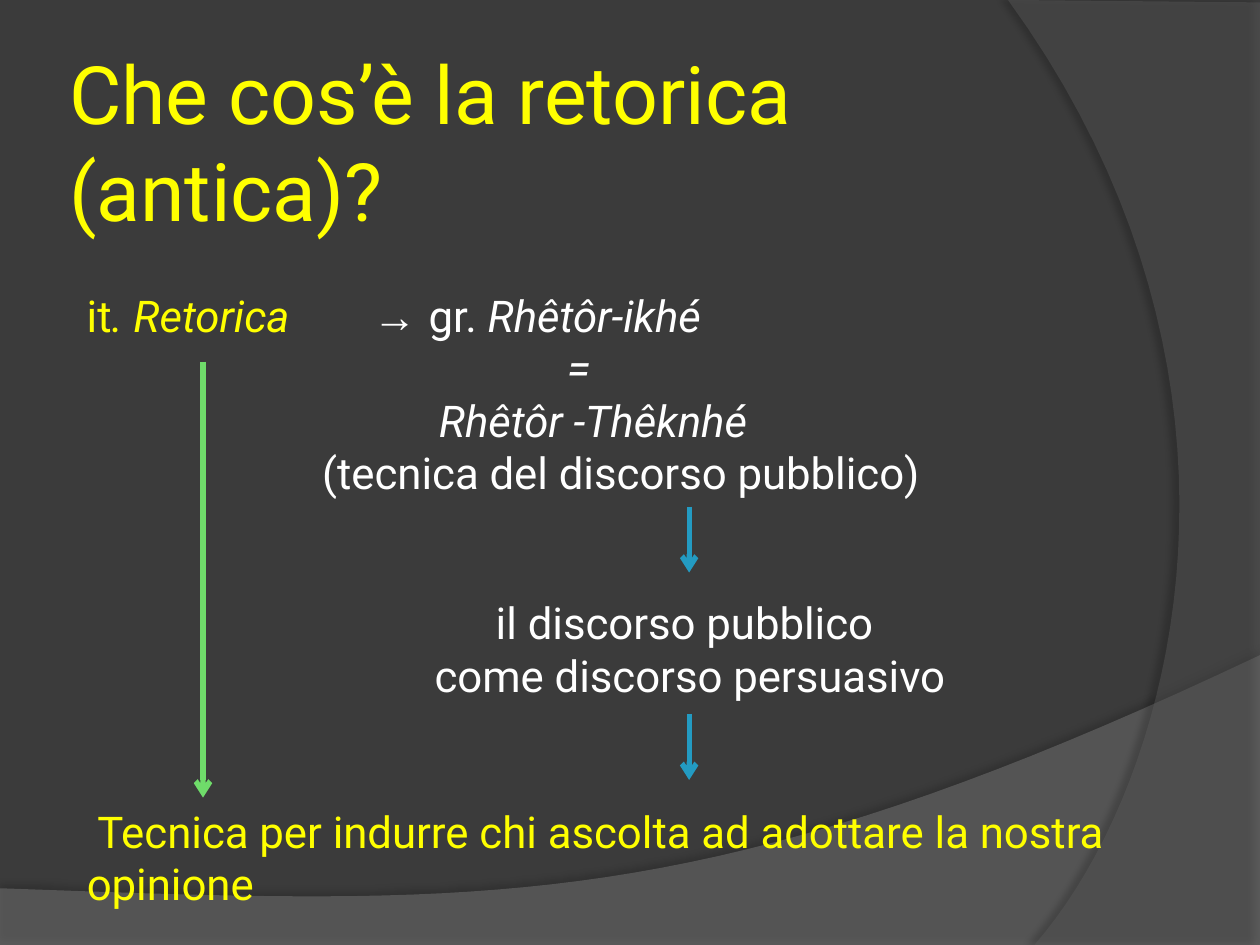
"""Build the slide that explains what ancient rhetoric is."""
import pptx
import pptx.dml.color
import pptx.enum.dml
import pptx.enum.shapes
import pptx.enum.text
import pptx.oxml
import pptx.oxml.ns
import pptx.util

Pt = pptx.util.Pt
RGBColor = pptx.dml.color.RGBColor
CHARCOAL = RGBColor(0x3B, 0x3B, 0x3B)
HILL_GREY = RGBColor(0x7F, 0x7F, 0x7F)
ARC_GREY = RGBColor(0x5E, 0x5E, 0x5E)
YELLOW = RGBColor(0xFF, 0xFF, 0x00)
WHITE = RGBColor(0xFF, 0xFF, 0xFF)
BLUE = RGBColor(0x23, 0x9B, 0xC2)
GREEN = RGBColor(0x6F, 0xDC, 0x6A)
FONT = "Roboto"
BODY_SIZE = 25
CURVE_STEPS = 40
NAMESPACE = pptx.oxml.ns.nsdecls("a")


def curve_points(start, control_1, control_2, end):
    """Return points along a cubic curve, without its start."""
    points = []
    for step in range(1, CURVE_STEPS + 1):
        t = step / CURVE_STEPS
        weights = ((1 - t) ** 3, 3 * t * (1 - t) ** 2, 3 * t ** 2 * (1 - t), t ** 3)
        corners = (start, control_1, control_2, end)
        points.append(tuple(sum(w * c[axis] for w, c in zip(weights, corners)) for axis in (0, 1)))
    return points


def add_band(slide, straight, curve, color, opacity, shadow):
    """Add a translucent backdrop band with one curved edge and a soft shadow."""
    outline = [(Pt(x), Pt(y)) for x, y in straight[1:] + curve_points(straight[-1], *curve)]
    first_x, first_y = straight[0]
    builder = slide.shapes.build_freeform(Pt(first_x), Pt(first_y))
    builder.add_line_segments(outline, close=True)
    band = builder.convert_to_shape()
    band.line.fill.background()
    band.fill.solid()
    band.fill.fore_color.rgb = color
    color_element = band._element.spPr.find(".//" + pptx.oxml.ns.qn("a:srgbClr"))
    color_element.append(pptx.oxml.parse_xml(f'<a:alpha {NAMESPACE} val="{opacity * 1000}"/>'))
    shadow_opacity, distance, angle = shadow
    band._element.spPr.append(pptx.oxml.parse_xml(
        f'<a:effectLst {NAMESPACE}><a:outerShdw blurRad="{Pt(4)}" dist="{Pt(distance)}" '
        f'dir="{angle * 60000}" rotWithShape="0"><a:srgbClr val="000000">'
        f'<a:alpha val="{shadow_opacity * 1000}"/></a:srgbClr></a:outerShdw></a:effectLst>'))
    return band


def format_run(run, size, color, italic=False):
    """Set the font of a run."""
    run.font.name = FONT
    run.font.size = Pt(size)
    run.font.color.rgb = color
    run.font.italic = italic


def set_title(title, wording):
    """Place and format the title placeholder."""
    title.left, title.top, title.width, title.height = Pt(36), Pt(21.6), Pt(588), Pt(118)
    frame = title.text_frame
    frame.text = wording
    frame.word_wrap = True
    frame.auto_size = pptx.enum.text.MSO_AUTO_SIZE.NONE
    frame.vertical_anchor = pptx.enum.text.MSO_ANCHOR.MIDDLE
    frame.margin_left = frame.margin_right = frame.margin_top = frame.margin_bottom = Pt(3.6)
    frame.paragraphs[0].alignment = pptx.enum.text.PP_ALIGN.LEFT
    format_run(frame.paragraphs[0].runs[0], 46, YELLOW)


def add_text(slide, left, top, width, height, lines, centered=False):
    """Add a text box; each line is a first-line indent and its runs."""
    frame = slide.shapes.add_textbox(Pt(left), Pt(top), Pt(width), Pt(height)).text_frame
    frame.word_wrap = True
    for index, (indent, runs) in enumerate(lines):
        paragraph = frame.add_paragraph() if index else frame.paragraphs[0]
        if centered:
            paragraph.alignment = pptx.enum.text.PP_ALIGN.CENTER
        if indent:
            paragraph._p.get_or_add_pPr().set("indent", str(Pt(indent)))
        for wording, color, italic in runs:
            run = paragraph.add_run()
            run.text = wording
            format_run(run, BODY_SIZE, color, italic)
    return frame


def add_etymology(slide):
    """Add the derivation of the word from Greek."""
    frame = add_text(slide, 42.5, 161.3, 566.6, 128.2, [
        (0, [("it", YELLOW, False), (". Retorica", YELLOW, True), ("\t→ ", WHITE, False),
             ("gr. ", WHITE, False), ("Rhêtôr-ikhé", WHITE, True)]),
        (274.5, [("=", WHITE, True)]),
        (201.3, [("Rhêtôr -Thêknhé", WHITE, True)]),
        (134.5, [("(tecnica del discorso pubblico)", WHITE, False)]),
    ])
    first_line = frame.paragraphs[0]
    first_line._p.get_or_add_pPr().append(pptx.oxml.parse_xml(
        f'<a:tabLst {NAMESPACE}><a:tab pos="{Pt(163.5)}" algn="l"/></a:tabLst>'))
    derivation_sign = first_line.runs[2]
    derivation_sign.font.name = "Arial"
    derivation_sign.font.bold = True


def add_arrow(slide, x, top, bottom, color):
    """Add a downward arrow."""
    arrow = slide.shapes.add_connector(
        pptx.enum.shapes.MSO_CONNECTOR.STRAIGHT, Pt(x), Pt(top), Pt(x), Pt(bottom))
    arrow.line.color.rgb = color
    arrow.line.width = Pt(3)
    arrow.line._get_or_add_ln().append(
        pptx.oxml.parse_xml(f'<a:tailEnd {NAMESPACE} type="arrow"/>'))
    arrow._element.spPr.append(pptx.oxml.parse_xml(f"<a:effectLst {NAMESPACE}/>"))


def main():
    """Build and save the slide."""
    deck = pptx.Presentation()
    deck.slide_width, deck.slide_height = Pt(720), Pt(540)
    slide = deck.slides.add_slide(deck.slide_layouts[5])
    slide.background.fill.solid()
    slide.background.fill.fore_color.rgb = CHARCOAL

    add_band(slide, [(0, 507.6), (0, 540), (720, 540), (720, 374.4)],
             [(402.5, 524.9), (281.5, 517.7), (0, 507.6)], HILL_GREY, 45, (35, 3.5, 270))
    arc = add_band(slide, [(720, 1.4), (720, 540), (591.1, 540)],
                   [(673.2, 445.7), (733, 216), (576, 0)], ARC_GREY, 40, (45, 4, 180))
    title = slide.shapes.title
    arc._element.addnext(title._element)
    set_title(title, "Che cos’è la retorica (antica)?")

    add_etymology(slide)
    add_text(slide, 241.2, 337, 306, 67.7, [
        (0, [("il discorso pubblico ", WHITE, False)]),
        (0, [("come discorso persuasivo", WHITE, False)]),
    ], centered=True)
    add_text(slide, 42.5, 456.2, 677.5, 67.7, [
        (6, [("Tecnica per indurre chi ascolta ad adottare la nostra opinione", YELLOW, False)]),
    ])

    for top in (289.5, 408):
        add_arrow(slide, 393.8, top, top + 37.7, BLUE)
    add_arrow(slide, 116, 206.6, 455.8, GREEN)
    deck.save("out.pptx")


if __name__ == "__main__":
    main()
